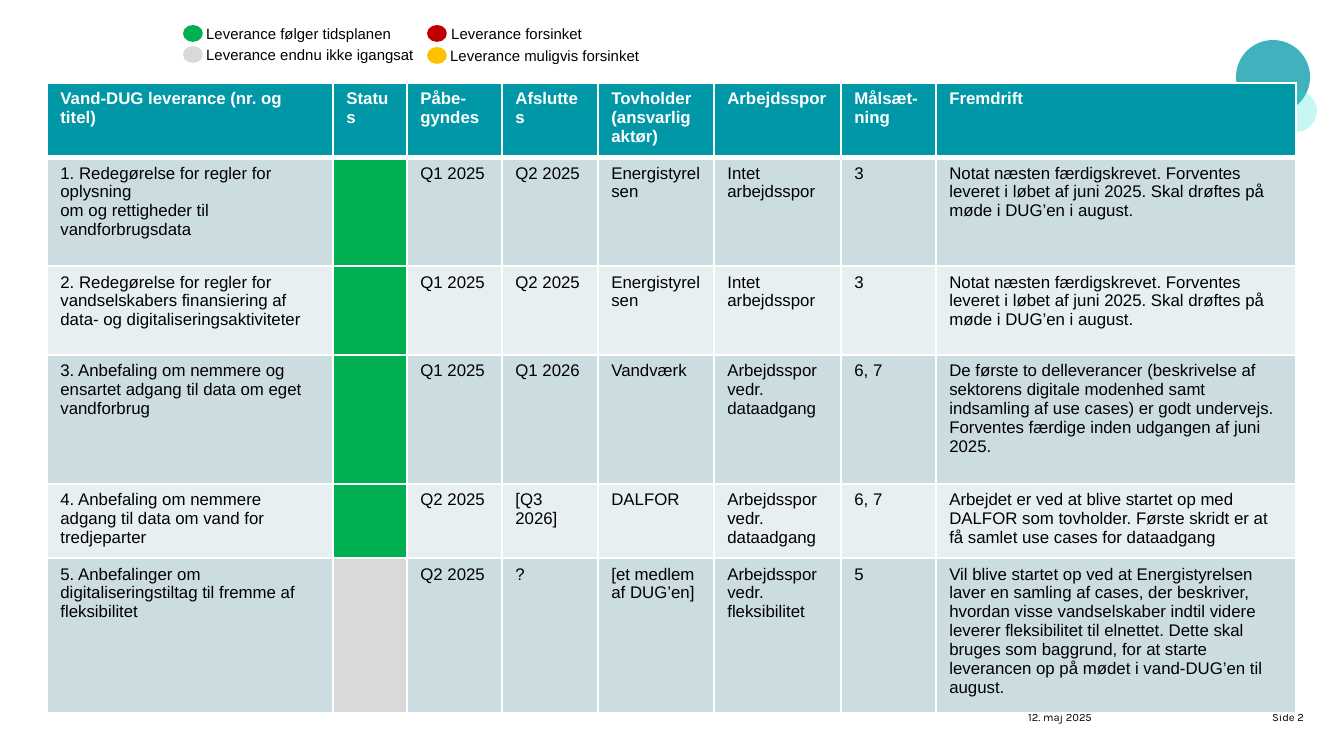
import pptx
import pptx.dml.color
import pptx.enum.shapes
import pptx.enum.text
import pptx.oxml
import pptx.oxml.ns
import pptx.util

PX = 914400 / 134.4

COLORS = {
    "teal": "0097A7", "mint": "1DE2CD", "white": "FFFFFF", "black": "000000",
    "odd": "CCDDE1", "even": "E7EFF1",
    "on_track": "00B050", "late": "C00000", "maybe_late": "FFC000", "not_started": "D9D9D9",
}

# Decoration: colour, opacity in percent, left, top, diameter
BUBBLES = [("teal", 75, 1236, 40, 74), ("mint", 25, 1275, 90, 42)]

# Legend: label, status, dot left, dot top, label left, label top, label width
LEGEND = [
    ("Leverance følger tidsplanen", "on_track", 185, 27, 193, 18, 215),
    ("Leverance endnu ikke igangsat", "not_started", 185, 48, 193, 39, 238),
    ("Leverance forsinket", "late", 429, 27, 438, 18, 164),
    ("Leverance muligvis forsinket", "maybe_late", 429, 49, 437, 40, 218),
]

HEADERS = ["Vand-DUG leverance (nr. og titel)", "Status", "Påbe-gyndes", "Afsluttes",
           "Tovholder (ansvarlig aktør)", "Arbejdsspor", "Målsæt-ning", "Fremdrift"]
COLUMN_WIDTHS = [286, 74, 95, 96, 116, 127, 95, 360]
ROW_HEIGHTS = [69, 109, 89, 129, 70, 146]
STATUS_COLUMN = 1

DRAFT_NOTE = ("Notat næsten færdigskrevet. Forventes leveret i løbet af juni 2025. "
              "Skal drøftes på møde i DUG’en i august.")
DELIVERIES = [
    ("1. Redegørelse for regler for oplysning\nom og rettigheder til vandforbrugsdata",
     "on_track", "Q1 2025", "Q2 2025", "Energistyrelsen", "Intet arbejdsspor", "3", DRAFT_NOTE),
    ("2. Redegørelse for regler for vandselskabers finansiering af data- og "
     "digitaliseringsaktiviteter",
     "on_track", "Q1 2025", "Q2 2025", "Energistyrelsen", "Intet arbejdsspor", "3", DRAFT_NOTE),
    ("3. Anbefaling om nemmere og ensartet adgang til data om eget vandforbrug",
     "on_track", "Q1 2025", "Q1 2026", "Vandværk", "Arbejdsspor vedr. dataadgang", "6, 7",
     "De første to delleverancer (beskrivelse af sektorens digitale modenhed samt indsamling "
     "af use cases) er godt undervejs. Forventes færdige inden udgangen af juni 2025."),
    ("4. Anbefaling om nemmere adgang til data om vand for tredjeparter",
     "on_track", "Q2 2025", "[Q3 2026]", "DALFOR", "Arbejdsspor vedr. dataadgang", "6, 7",
     "Arbejdet er ved at blive startet op med DALFOR som tovholder. Første skridt er at få "
     "samlet use cases for dataadgang"),
    ("5. Anbefalinger om digitaliseringstiltag til fremme af fleksibilitet",
     "not_started", "Q2 2025", "?", "[et medlem af DUG’en]", "Arbejdsspor vedr. fleksibilitet",
     "5",
     "Vil blive startet op ved at Energistyrelsen laver en samling af cases, der beskriver, "
     "hvordan visse vandselskaber indtil videre leverer fleksibilitet til elnettet. Dette skal "
     "bruges som baggrund, for at starte leverancen op på mødet i vand-DUG’en til august."),
]

# Footer: text, left, width, alignment
FOOTER = [
    ("12. maj 2025", 1015, 181, pptx.enum.text.PP_ALIGN.LEFT),
    ("Side 2", 1199, 118, pptx.enum.text.PP_ALIGN.RIGHT),
]


def px(length):
    return pptx.util.Emu(round(length * PX))


def rgb(color):
    return pptx.dml.color.RGBColor.from_string(COLORS[color])


def style(paragraph, size, font="Arial", color="black", bold=False):
    paragraph.font.size = pptx.util.Pt(size)
    paragraph.font.name = font
    paragraph.font.color.rgb = rgb(color)
    paragraph.font.bold = bold


def add_ellipse(slide, color, left, top, width, height):
    ellipse = slide.shapes.add_shape(pptx.enum.shapes.MSO_SHAPE.OVAL,
                                     px(left), px(top), px(width), px(height))
    ellipse.shadow.inherit = False
    ellipse.fill.solid()
    ellipse.fill.fore_color.rgb = rgb(color)
    return ellipse


def add_label(slide, text, left, top, width, height):
    label = slide.shapes.add_textbox(px(left), px(top), px(width), px(height))
    label.text_frame.text = text
    return label.text_frame


def set_borders(cell, bottom_width):
    properties = cell._tc.get_or_add_tcPr()
    for position, side in enumerate(("lnL", "lnR", "lnT", "lnB")):
        width = pptx.util.Pt(bottom_width if side == "lnB" else 1)
        properties.insert(position, pptx.oxml.parse_xml(
            f'<a:{side} {pptx.oxml.ns.nsdecls("a")} w="{width}"><a:solidFill>'
            f'<a:srgbClr val="{COLORS["white"]}"/></a:solidFill></a:{side}>'))


def fill_cell(cell, text, fill, text_color, bold, bottom_width):
    cell.fill.solid()
    cell.fill.fore_color.rgb = rgb(fill)
    cell.text = text
    for paragraph in cell.text_frame.paragraphs:
        style(paragraph, 9, color=text_color, bold=bold)
    set_borders(cell, bottom_width)


presentation = pptx.Presentation()
presentation.slide_width, presentation.slide_height = px(1344), px(756)
slide = presentation.slides.add_slide(presentation.slide_layouts[6])

# Corner bubbles
for color, opacity, left, top, diameter in BUBBLES:
    bubble = add_ellipse(slide, color, left, top, diameter, diameter)
    bubble.line.fill.background()
    tint = bubble.fill._xPr.find(".//" + pptx.oxml.ns.qn("a:srgbClr"))
    tint.append(pptx.oxml.parse_xml(
        f'<a:alpha {pptx.oxml.ns.nsdecls("a")} val="{opacity * 1000}"/>'))

# Footer
for text, left, width, alignment in FOOTER:
    frame = add_label(slide, text, left, 704, width, 40)
    frame.word_wrap = True
    frame.paragraphs[0].alignment = alignment
    style(frame.paragraphs[0], 6, font="Karla")

# Delivery table
table = slide.shapes.add_table(len(ROW_HEIGHTS), len(COLUMN_WIDTHS), px(47), px(83),
                               px(sum(COLUMN_WIDTHS)), px(sum(ROW_HEIGHTS))).table
table.horz_banding = False
for column, width in zip(table.columns, COLUMN_WIDTHS):
    column.width = px(width)
for row, height in zip(table.rows, ROW_HEIGHTS):
    row.height = px(height)
for column, header in enumerate(HEADERS):
    fill_cell(table.cell(0, column), header, "teal", "white", True, 3)
for row, delivery in enumerate(DELIVERIES, start=1):
    band = "odd" if row % 2 else "even"
    for column, value in enumerate(delivery):
        is_status = column == STATUS_COLUMN
        fill_cell(table.cell(row, column), "" if is_status else value,
                  value if is_status else band, "black", False, 1)

# Status legend
for text, status, dot_left, dot_top, left, top, width in LEGEND:
    dot = add_ellipse(slide, status, dot_left, dot_top, 16, 13)
    dot.line.color.rgb = rgb(status)
    dot.line.width = pptx.util.Pt(2)
    frame = add_label(slide, text, left, top, width, 32)
    frame.word_wrap = False
    frame.auto_size = pptx.enum.text.MSO_AUTO_SIZE.SHAPE_TO_FIT_TEXT
    style(frame.paragraphs[0], 8)

presentation.save("out.pptx")
